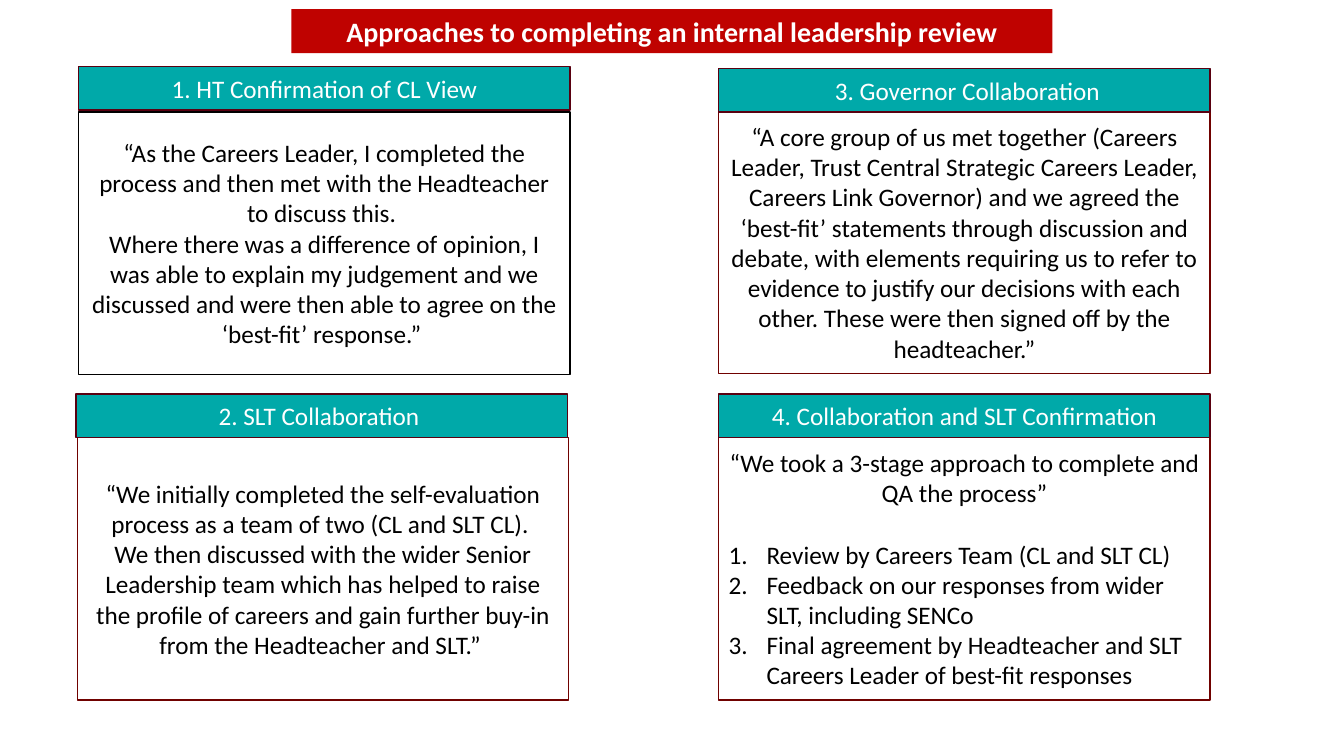
"""Build the slide on approaches to an internal leadership review."""
from dataclasses import dataclass

from lxml.etree import SubElement
from pptx import Presentation
from pptx.dml.color import RGBColor as RGB
from pptx.enum.shapes import MSO_SHAPE as SHAPE
from pptx.enum.text import MSO_ANCHOR as ANCHOR, PP_ALIGN as ALIGN
from pptx.oxml.ns import qn
from pptx.util import Pt

COLORS = {
    "white": "FFFFFF",
    "black": "000000",
    "teal": "00A9A9",
    "red": "BF0200",
    "maroon": "700100",
    "wine": "590010",
}
BODY_FONT = {"name": "Calibri", "size": Pt(18), "bold": False}
TITLE_FONT = {"name": "Calibri", "size": Pt(20), "bold": True}
CARD_W, HEAD_H, BODY_H = 351, 31, 187.6
RIGHT_X, LOWER_HEAD_Y, LOWER_BODY_Y = 513.4, 281.5, 312.5
LIST_INDENT = Pt(27)


@dataclass(frozen=True)
class Box:
    x: float
    y: float
    w: float
    h: float
    fill: str
    line: str | None
    ink: str


@dataclass(frozen=True)
class Approach:
    title: str
    quote: tuple[str, ...]
    head: tuple[float, float]
    body: tuple[float, float]
    line: str = "maroon"
    steps: tuple[str, ...] = ()


APPROACHES = (
    Approach(
        "1. HT Confirmation of CL View",
        (
            "“As the Careers Leader, I completed the process and then met with "
            "the Headteacher to discuss this. ",
            "Where there was a difference of opinion, I was able to explain my "
            "judgement and we discussed and were then able to agree on the "
            "‘best-fit’ response.” ",
        ),
        (56.2, 47.7), (56.2, 79.9), "black",
    ),
    Approach(
        "2. SLT Collaboration ",
        (
            "“We initially completed the self-evaluation process as a team of "
            "two (CL and SLT CL). ",
            "We then discussed with the wider Senior Leadership team which has "
            "helped to raise the profile of careers and gain further buy-in "
            "from the Headteacher and SLT.” ",
        ),
        (54.3, LOWER_HEAD_Y), (55.2, LOWER_BODY_Y),
    ),
    Approach(
        " 3. Governor Collaboration",
        (
            "“A core group of us met together (Careers Leader, Trust Central "
            "Strategic Careers Leader, Careers Link Governor) and we agreed "
            "the ‘best-fit’ statements through discussion and debate, with "
            "elements requiring us to refer to evidence to justify our "
            "decisions with each other. These were then signed off by the "
            "headteacher.”",
        ),
        (RIGHT_X, 49), (RIGHT_X, 79.2),
    ),
    Approach(
        " 4. Collaboration and SLT Confirmation ",
        ("“We took a 3-stage approach to complete and QA the process”",),
        (RIGHT_X, LOWER_HEAD_Y), (RIGHT_X, LOWER_BODY_Y),
        steps=(
            "Review by Careers Team (CL and SLT CL)",
            "Feedback on our responses from wider SLT, including SENCo",
            "Final agreement by Headteacher and SLT Careers Leader of "
            "best-fit responses",
        ),
    ),
)


def rgb(name: str) -> RGB:
    return RGB.from_string(COLORS[name])


def number(p) -> None:
    p.alignment = ALIGN.LEFT
    pPr = p._p.get_or_add_pPr()
    pPr.set("marL", str(LIST_INDENT))
    pPr.set("indent", str(-LIST_INDENT))
    SubElement(pPr, qn("a:buFont"), typeface="+mj-lt")
    SubElement(pPr, qn("a:buAutoNum"), type="arabicPeriod")


def add_box(s, box: Box, lines: tuple[str, ...], font: dict,
            steps: tuple[str, ...] = ()) -> None:
    sp = s.shapes.add_shape(
        SHAPE.RECTANGLE, Pt(box.x), Pt(box.y), Pt(box.w), Pt(box.h))
    sp.shadow.inherit = False
    sp.fill.solid()
    sp.fill.fore_color.rgb = rgb(box.fill)
    if box.line:
        sp.line.color.rgb = rgb(box.line)
        sp.line.width = Pt(1)
    else:
        sp.line.fill.background()
    tf = sp.text_frame
    tf.word_wrap = True
    tf.vertical_anchor = ANCHOR.MIDDLE
    for i, text in enumerate(lines + steps):
        p = tf.add_paragraph() if i else tf.paragraphs[0]
        p.alignment = ALIGN.CENTER
        if i >= len(lines):
            if i == len(lines):
                p.space_before = Pt(22)
            number(p)
        r = p.add_run()
        r.text = text
        for key, value in font.items():
            setattr(r.font, key, value)
        r.font.color.rgb = rgb(box.ink)


def add_approach(s, a: Approach) -> None:
    body = Box(*a.body, CARD_W, BODY_H, "white", a.line, "black")
    head = Box(*a.head, CARD_W, HEAD_H, "teal", "wine", "white")
    add_box(s, body, a.quote, BODY_FONT, a.steps)
    add_box(s, head, (a.title,), BODY_FONT)


def main() -> None:
    prs = Presentation()
    prs.slide_width, prs.slide_height = Pt(960), Pt(540)
    s = prs.slides.add_slide(prs.slide_layouts[6])
    for a in APPROACHES:
        add_approach(s, a)
    title = Box(208.2, 6.5, 543.5, 31.5, "red", None, "white")
    add_box(s, title,
            ("Approaches to completing an internal leadership review",),
            TITLE_FONT)
    prs.save("out.pptx")


if __name__ == "__main__":
    main()
